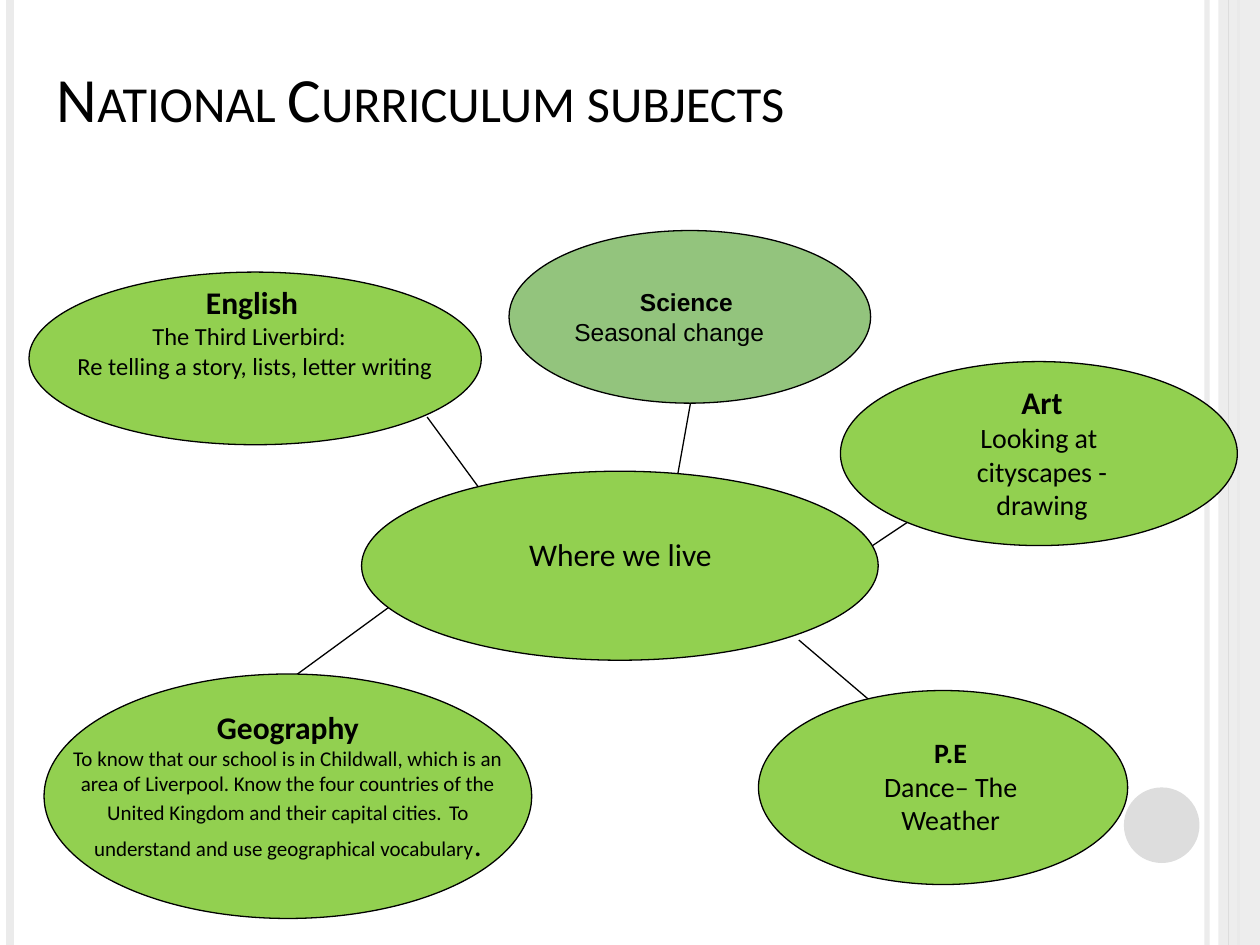
import pptx
import pptx.util
import pptx.dml.color
import pptx.enum.shapes
import pptx.enum.text
import pptx.oxml.ns
import lxml.etree

RGBColor = pptx.dml.color.RGBColor
BLACK = RGBColor(0x00, 0x00, 0x00)
PALE = RGBColor(0xEB, 0xEB, 0xEB)
GREY = RGBColor(0xDD, 0xDD, 0xDD)
LIME = RGBColor(0x92, 0xD0, 0x50)
SAGE = RGBColor(0x93, 0xC4, 0x7D)

OVAL = pptx.enum.shapes.MSO_SHAPE.OVAL
RECT = pptx.enum.shapes.MSO_SHAPE.RECTANGLE
CENTER = pptx.enum.text.PP_ALIGN.CENTER
LEFT = pptx.enum.text.PP_ALIGN.LEFT
qn = pptx.oxml.ns.qn
Pt = pptx.util.Pt

prs = pptx.Presentation()
prs.slide_width = pptx.util.Inches(10)
prs.slide_height = pptx.util.Inches(7.5)
s = prs.slides.add_slide(prs.slide_layouts[5])

# All positions are percentages of the slide's width and height
X = prs.slide_width / 100
Y = prs.slide_height / 100


def add_line(x1, y1, x2, y2, color=BLACK, width=0.75):
    line = s.shapes.add_connector(pptx.enum.shapes.MSO_CONNECTOR.STRAIGHT,
                                  int(x1 * X), int(y1 * Y), int(x2 * X), int(y2 * Y))
    line.line.color.rgb = color
    line.line.width = Pt(width)
    lxml.etree.SubElement(line._element.spPr, qn("a:effectLst"))
    return line


def add_filled(kind, x, y, w, h, color, outlined=True):
    sp = s.shapes.add_shape(kind, int(x * X), int(y * Y), int(w * X), int(h * Y))
    sp.shadow.inherit = False
    sp.fill.solid()
    sp.fill.fore_color.rgb = color
    if outlined:
        sp.line.color.rgb = BLACK
        sp.line.width = Pt(0.75)
    else:
        sp.line.fill.background()
    return sp


# Side stripes and corner dot
inner = add_line(95.8, 0, 95.8, 100, PALE, 3)
add_line(0.8, 0, 0.8, 100, PALE, 4.5)
add_line(98.3, 0, 98.3, 100, GREY, 1.5)
band = add_filled(RECT, 96.7, 0, 3.3, 100, PALE, outlined=False)
add_line(97.5, 0, 97.5, 100, GREY, 0.75)
add_filled(OVAL, 89.2, 83.33, 6, 8, GREY, outlined=False)
for sp, opacity in ((inner, 93), (band, 86)):
    clr = next(sp._element.spPr.iter(qn("a:srgbClr")))
    lxml.etree.SubElement(clr, qn("a:alpha"), val=str(opacity * 1000))

# Title
title = s.shapes.title
title.left, title.top = int(3.5 * X), int(-1.73 * Y)
title.width, title.height = int(90 * X), int(16.67 * Y)
tf = title.text_frame
tf.auto_size = pptx.enum.text.MSO_AUTO_SIZE.NONE
tf.vertical_anchor = pptx.enum.text.MSO_ANCHOR.BOTTOM
p = tf.paragraphs[0]
p.alignment = LEFT
r = p.add_run()
r.text = "National Curriculum subjects"
r.font.size = Pt(36)
r.font.name = "Calibri"
r.font.color.rgb = BLACK
r._r.get_or_add_rPr().set("cap", "small")

# Links lie behind the ovals, which cover their ends
for ends in (
    (63.4, 67.73, 70.1, 75.33),  # P.E
    (69.1, 57.87, 72.1, 55.2),   # Art
    (38, 51.6, 33.9, 44.13),     # English
    (31, 64.13, 23.2, 71.73),    # Geography
    (54.8, 42.67, 53.8, 50.13),  # Science
):
    add_line(*ends)

# Subject ovals around the topic
for box in (
    (28.7, 49.87, 41, 20),       # topic
    (60.2, 73.07, 29.3, 20.53),  # P.E
    (66.7, 38.27, 31.5, 19.47),  # Art
    (2.3, 28.8, 35.9, 18.27),    # English
    (3.5, 71.33, 38.7, 25.87),   # Geography
):
    add_filled(OVAL, *box, LIME)
science = add_filled(OVAL, 40.4, 24.4, 28.7, 18.27, SAGE)

# Labels: box, then paragraphs of (text, size, bold, font) runs
labels = [
    ((33.9, 56, 30.7, 5.33), [[("Where we live", 18, False, "Calibri")]]),
    ((1.9, 29.33, 36.2, 14.8), [
        [("English", 18, True, "Calibri")],
        [("The Third Liverbird: ", 14, False, "Calibri")],
        [(" Re telling a story, lists, letter writing", 14, False, "Calibri")]]),
    ((4.15, 74.23, 37.4, 22.67), [
        [("Geography", 18, True, "Calibri")],
        [("To know that our school is in Childwall, which is an area of Liverpool. "
          "Know the four countries of the United Kingdom and their capital cities.",
          12, False, "Calibri"),
         (" ", 14, False, "Arial"),
         ("To understand and use geographical vocabulary", 12, False, "Calibri"),
         (".", 18, False, "Calibri")]]),
    ((72.7, 39.87, 20, 16.13), [
        [("Art", 18, True, "Calibri")],
        [("Looking at ", 16, False, "Calibri")],
        [("cityscapes - drawing", 16, False, "Calibri")]]),
    ((65.4, 77.2, 20.1, 12.13), [
        [("P.E", 16, True, "Calibri")],
        [("Dance– The Weather", 16, False, "Calibri")]]),
    (None, [
        [("Science ", 14, True, "Arial")],
        [("Seasonal change", 14, False, "Arial")]]),
]
for box, paragraphs in labels:
    if box:
        x, y, w, h = box
        tf = s.shapes.add_textbox(int(x * X), int(y * Y), int(w * X), int(h * Y)).text_frame
    else:
        tf = science.text_frame
        tf.vertical_anchor = pptx.enum.text.MSO_ANCHOR.MIDDLE
        tf.margin_top = tf.margin_bottom = pptx.util.Inches(0.1)
    tf.word_wrap = True
    for i, runs in enumerate(paragraphs):
        p = tf.add_paragraph() if i else tf.paragraphs[0]
        p.alignment = CENTER if box or i == 0 else LEFT
        for text, size, bold, font in runs:
            r = p.add_run()
            r.text = text
            r.font.size = Pt(size)
            r.font.bold = bold
            r.font.name = font
            r.font.color.rgb = BLACK

prs.save("out.pptx")
